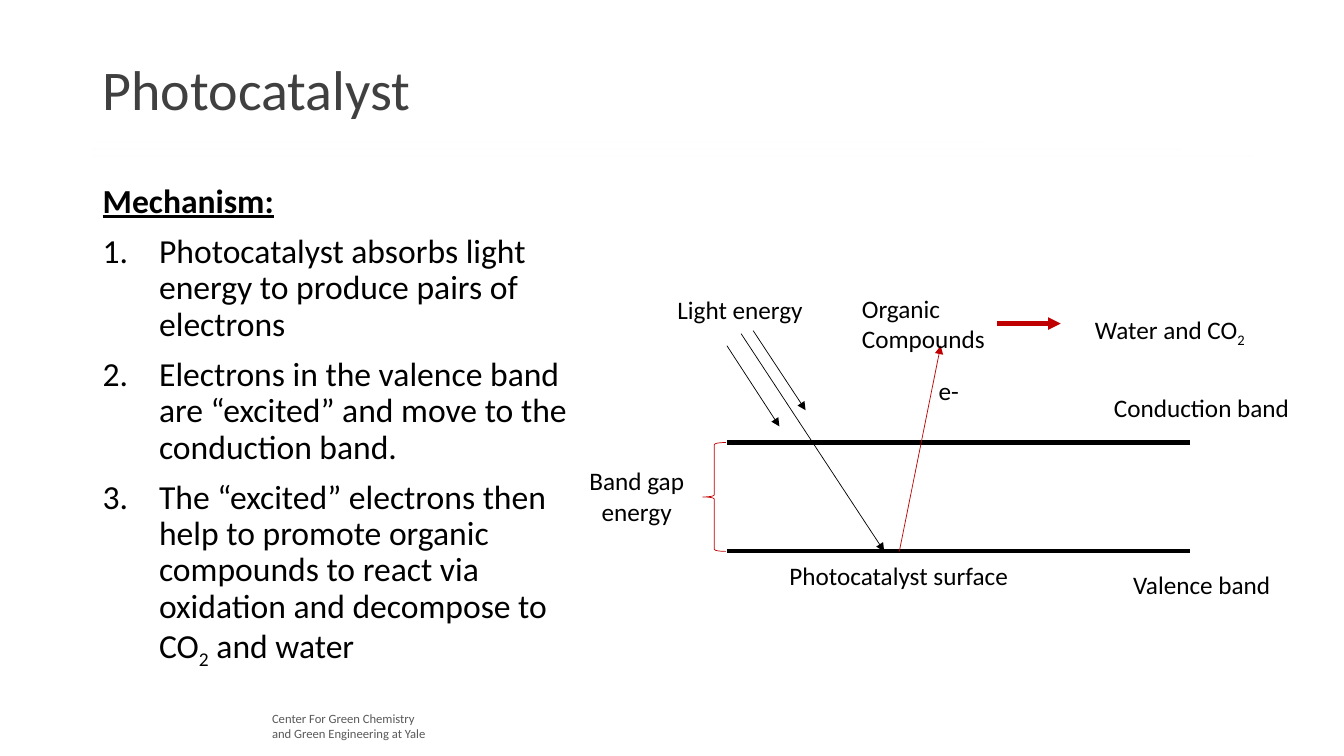
from lxml import etree
from pptx import Presentation
from pptx.dml.color import RGBColor
from pptx.enum.shapes import MSO_CONNECTOR as Connector, MSO_SHAPE as Shape
from pptx.enum.text import MSO_ANCHOR as Anchor, MSO_AUTO_SIZE as AutoSize, PP_ALIGN as Align
from pptx.oxml.ns import qn
from pptx.util import Pt

EMU_PER_PX = 9144
FONT = "Calibri"
COLORS = {
    "text": "000000", "title": "404040", "footer": "595959", "electron": "C00000",
    "rule_blue": "4EB3CF", "rule_teal": "44C1A3", "rule_green": "37A76F",
}
STEPS = [
    "Photocatalyst absorbs light energy to produce pairs of electrons",
    "Electrons in the valence band are “excited” and move to the conduction band.",
    "The “excited” electrons then help to promote organic compounds to react via "
    "oxidation and decompose to CO_2_ and water",
]


def px(length):
    return round(length * EMU_PER_PX)


def color(name):
    return RGBColor.from_string(COLORS[name])


def fill_para(para, text, size, tint="text"):
    """Write text into para; parts between underscores become subscripts."""
    first, *others = text.split("_")
    para.text = first
    for index, part in enumerate(others):
        if part:
            span = para.add_run()
            span.text = part
            if index % 2 == 0:
                span.font._element.set("baseline", "-25000")
    for span in para.runs:
        span.font.name = FONT
        span.font.size = Pt(size)
        span.font.color.rgb = color(tint)


def add_text(page, left, top, width, height, lines, size, tint="text", wrap=True):
    box = page.shapes.add_textbox(px(left), px(top), px(width), px(height))
    frame = box.text_frame
    frame.word_wrap = wrap
    frame.auto_size = AutoSize.NONE if wrap else AutoSize.SHAPE_TO_FIT_TEXT
    for index, line in enumerate(lines):
        para = frame.add_paragraph() if index else frame.paragraphs[0]
        fill_para(para, line, size, tint)
    return frame


def add_line(page, start, end, tint, weight, arrow=False, alpha=None):
    line = page.shapes.add_connector(Connector.STRAIGHT, *map(px, (*start, *end)))
    line.line.color.rgb = color(tint)
    line.line.width = Pt(weight)
    properties = line._element.spPr
    outline = properties.find(qn("a:ln"))
    if alpha is not None:
        tone = outline.find(".//" + qn("a:srgbClr"))
        etree.SubElement(tone, qn("a:alpha"), val=str(alpha * 1000))
    if arrow:
        etree.SubElement(outline, qn("a:tailEnd"), type="triangle")
    etree.SubElement(properties, qn("a:effectLst"))


def add_header(page, left, top, width, height):
    rules = [(1, 122, 885, "rule_blue"), (-1, 129, 1081, "rule_teal"),
             (0, 136, 1151, "rule_green")]
    for shift, drop, length, tint in rules:
        x, y = left + shift, top + drop
        add_line(page, (x, y), (x + length, y), tint, 0.5, alpha=2)
    frame = add_text(page, left, top, width, height, ["Photocatalyst"], 40, "title")
    frame.vertical_anchor = Anchor.MIDDLE
    frame.paragraphs[0].line_spacing = 0.9


def add_mechanism(page, left, top, width, height):
    frame = add_text(page, left, top, width, height, ["Mechanism:", *STEPS], 24)
    heading, *steps = frame.paragraphs
    heading.line_spacing = 0.9
    heading.runs[0].font.bold = True
    heading.runs[0].font.underline = True
    for para in steps:
        properties = para._p.get_or_add_pPr()
        properties.set("marL", str(px(56)))
        properties.set("indent", str(-px(56)))
        etree.SubElement(properties, qn("a:buFont"), typeface="+mj-lt")
        etree.SubElement(properties, qn("a:buAutoNum"), type="arabicPeriod")
        para.line_spacing = 0.9
        para.space_before = Pt(10)


def add_band_diagram(page, left, top):
    def at(x, y):
        return left + x, top + y

    band_left, band_right, conduction, valence = 147, 606, 153, 261
    for level in (conduction, valence):
        add_line(page, at(band_left, level), at(band_right, level), "text", 3)

    light_rays = [((147, 57), (199, 137)), ((173, 42), (225, 121)),
                  ((161, 45), (303, valence))]
    for start, end in light_rays:
        add_line(page, at(*start), at(*end), "text", 0.5, arrow=True)
    add_line(page, at(318, valence), at(359, 57), "electron", 0.5, arrow=True)
    add_line(page, at(415, 35), at(478, 35), "electron", 3, arrow=True)

    brace = page.shapes.add_shape(
        Shape.LEFT_BRACE, *map(px, (*at(123, conduction), 23, valence - conduction)))
    brace.shadow.inherit = False
    brace.fill.background()
    brace.line.color.rgb = color("electron")
    brace.line.width = Pt(0.5)

    labels = [
        (88, 1, 146, ["Light energy"]),
        (540, 274, 158, ["Valence band"]),
        (521, 98, 196, ["Conduction band"]),
        (347, 81, 41, ["e-"]),
        (271, 0, 144, ["Organic", "Compounds"]),
        (502, 21, 176, ["Water and CO_2_"]),
        (199, 265, 239, ["Photocatalyst surface"]),
    ]
    for x, y, width, lines in labels:
        add_text(page, *at(x, y), width, 9 + 31 * len(lines), lines, 18, wrap=False)
    gap = add_text(page, *at(0, 171), 115, 71, ["Band gap", "energy"], 18, wrap=False)
    for para in gap.paragraphs:
        para.alignment = Align.CENTER


def add_footer(page, left, top, width, height):
    lines = ["Center For Green Chemistry", "and Green Engineering at Yale"]
    add_text(page, left, top, width, height, lines, 9, "footer")


def main():
    deck = Presentation()
    deck.slide_width, deck.slide_height = px(1333), px(750)
    page = deck.slides.add_slide(deck.slide_layouts[6])
    add_footer(page, 260, 700, 186, 40)
    add_header(page, 92, 19, 1150, 145)
    add_mechanism(page, 92, 178, 480, 481)
    add_band_diagram(page, 574, 286)
    deck.save("out.pptx")


if __name__ == "__main__":
    main()
